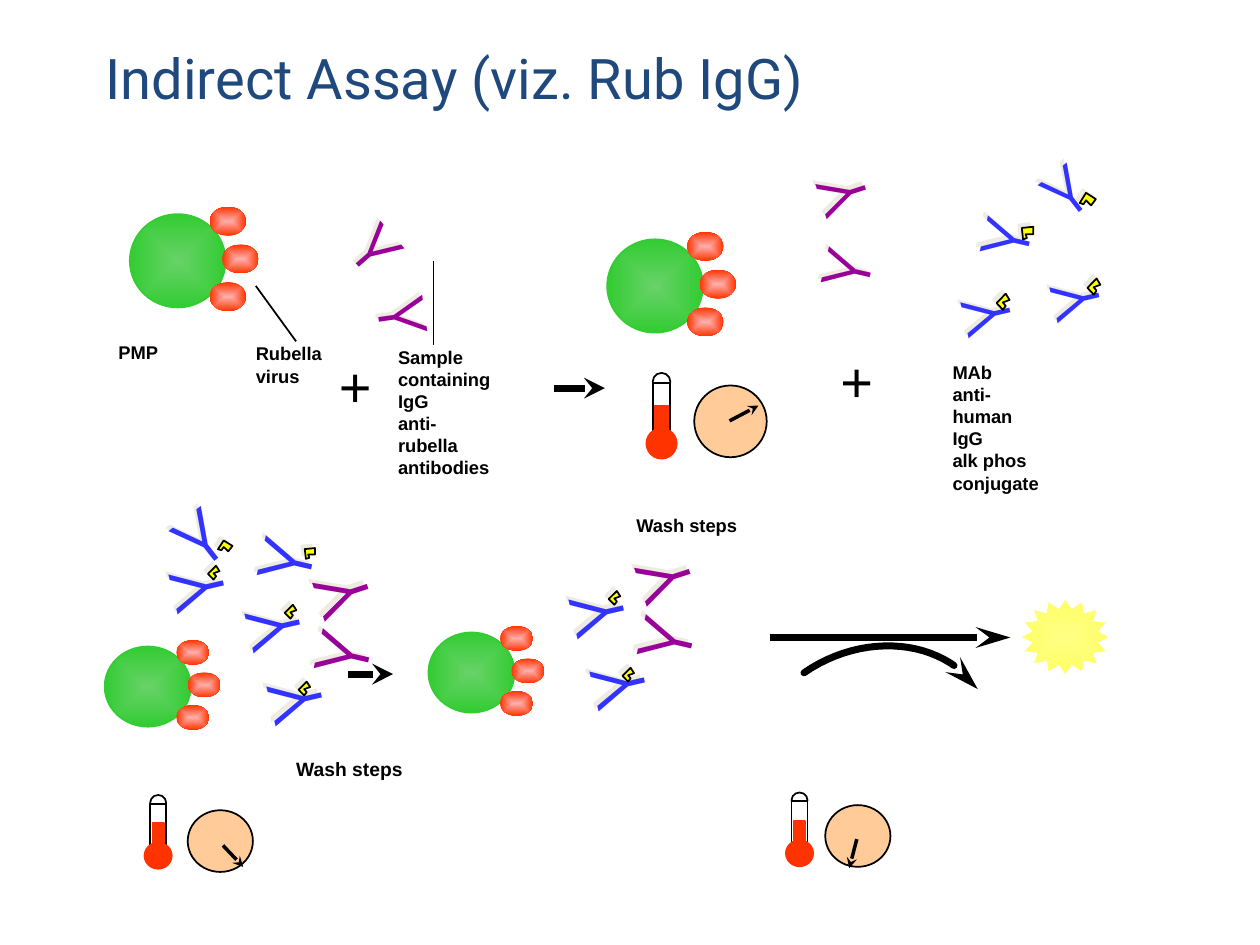
from dataclasses import dataclass

from lxml import etree
from pptx import Presentation
from pptx.dml.color import RGBColor
from pptx.enum.shapes import MSO_CONNECTOR, MSO_SHAPE
from pptx.enum.text import MSO_ANCHOR, PP_ALIGN
from pptx.oxml.ns import qn
from pptx.util import Pt

OVAL, RECT, STAR = MSO_SHAPE.OVAL, MSO_SHAPE.RECTANGLE, MSO_SHAPE.STAR_16_POINT
LINE = MSO_CONNECTOR.STRAIGHT
TOP, MID, LOW = MSO_ANCHOR.TOP, MSO_ANCHOR.MIDDLE, MSO_ANCHOR.BOTTOM
LEFT, MIDDLE = PP_ALIGN.LEFT, PP_ALIGN.CENTER


@dataclass(frozen=True)
class Theme:
    ink: str = "000000"
    paper: str = "FFFFFF"
    title: str = "1F497D"
    blue: str = "3333FF"
    purple: str = "990099"
    yellow: str = "FFFF00"
    red: str = "FF3300"
    green: str = "33CC33"
    dial: str = "FFCC99"
    shade: str = "EEECE1"
    core: tuple = ("67D267", "33CC33")
    spike: tuple = ("FFAEAB", "FF3300")
    glow: tuple = ("FFFF82", "FFFF66")
    body: str = "Arial"
    head: str = "Roboto"
    glyph: str = "TeX Gyre Adventor"
    big: float = 32
    small: float = 10.5
    note: float = 11


T = Theme()

# Horizontal scale, vertical scale and antibody type size of each row
UPPER = (1, 1, 36)
LOWER = (0.9, 0.86, 40)

# Outline of the enzyme tag for each turn of its antibody
TAGS = {
    257: [(3.6, 9.2), (0, 5.4), (5.2, 0), (7.4, 3.6), (3.6, 5), (5.2, 7)],
    283: [(0.7, 7.2), (0, 0.7), (6.5, 0), (6.5, 4.3), (2.2, 4.3), (2.9, 6.5)],
    322: [(0, 5.8), (3.6, 0), (9.2, 3.6), (6.5, 7.2), (3.6, 4.3), (2.2, 6.5)],
}


def rgb(code):
    return RGBColor.from_string(code)


def shade(shape):
    """Give a shape the hard pale shadow towards the upper left."""
    shape.shadow.inherit = False
    box = shape.element.spPr.find(qn("a:effectLst"))
    drop = etree.SubElement(box, qn("a:outerShdw"), dist=str(Pt(2.8)),
                            dir="13500000", algn="ctr", rotWithShape="0")
    etree.SubElement(drop, qn("a:srgbClr"), val=T.shade)


def paint(shape, fill=None, line=None, width=1):
    """A pair of colours as fill makes a gradient from the centre."""
    shape.shadow.inherit = False
    if isinstance(fill, tuple):
        shape.fill.gradient()
        for stop, code in zip(shape.fill.gradient_stops, fill):
            stop.color.rgb = rgb(code)
        grad = shape.element.spPr.find(qn("a:gradFill"))
        grad.remove(grad.find(qn("a:lin")))
        way = etree.SubElement(grad, qn("a:path"), path="shape")
        etree.SubElement(way, qn("a:fillToRect"),
                         l="50000", t="50000", r="50000", b="50000")
    elif fill:
        shape.fill.solid()
        shape.fill.fore_color.rgb = rgb(fill)
    else:
        shape.fill.background()
    if line:
        shape.line.color.rgb = rgb(line)
        shape.line.width = Pt(width)
    else:
        shape.line.fill.background()


def form(slide, kind, x, y, w, h, **style):
    shape = slide.shapes.add_shape(kind, Pt(x), Pt(y), Pt(w), Pt(h))
    paint(shape, **style)
    return shape


def text(slide, words, x, y, w, h, *, size=T.small, font=T.body, color=T.ink,
         bold=False, pad=(10.8, 5), anchor=TOP, align=LEFT, turn=0, wrap=True):
    box = slide.shapes.add_textbox(Pt(x), Pt(y), Pt(w), Pt(h))
    box.rotation = turn
    frame = box.text_frame
    frame.word_wrap = wrap
    frame.vertical_anchor = anchor
    frame.margin_left = frame.margin_right = Pt(pad[0])
    frame.margin_top = frame.margin_bottom = Pt(pad[1])
    frame.text = words
    for para in frame.paragraphs:
        para.alignment = align
        for run in para.runs:
            run.font.size, run.font.name = Pt(size), font
            run.font.bold = bold
            run.font.color.rgb = rgb(color)
    return box


def tip(shape, size="med"):
    ln = shape.line._get_or_add_ln()
    etree.SubElement(ln, qn("a:tailEnd"), type="stealth", w="med", len=size)


def rule(slide, x1, y1, x2, y2, width=1, head=None):
    line = slide.shapes.add_connector(LINE, Pt(x1), Pt(y1), Pt(x2), Pt(y2))
    line.line.color.rgb = rgb(T.ink)
    line.line.width = Pt(width)
    if head:
        tip(line, head)
    etree.SubElement(line.element.spPr, qn("a:effectLst"))


def trace(slide, dots, close):
    dots = [(Pt(x), Pt(y)) for x, y in dots]
    pen = slide.shapes.build_freeform(*dots[0])
    pen.add_line_segments(dots[1:], close=close)
    return pen.convert_to_shape()


def curve(slide, a, b, c, d, steps=24):
    """Draw a cubic curve with an arrowhead."""
    dots = []
    for i in range(steps + 1):
        t = i / steps
        u = 1 - t
        dots.append([u**3 * p + 3 * u * u * t * q + 3 * u * t * t * r + t**3 * s
                     for p, q, r, s in zip(a, b, c, d)])
    arc = trace(slide, dots, False)
    paint(arc, line=T.ink, width=4)
    arc.line._get_or_add_ln().set("cap", "rnd")
    tip(arc, "lg")


def body(slide, row, color, x, y, turn, tag=None):
    """Antibody centred on x, y, with an enzyme tag if a place is given."""
    kx, ky, size = row
    box = text(slide, "Y", x - 18, y - 24, 36, 48, size=size, font=T.glyph,
               color=color, pad=(0, 0), anchor=MID, align=MIDDLE,
               turn=turn, wrap=False)
    shade(box)
    if tag:
        dots = [(tag[0] + kx * px, tag[1] + ky * py) for px, py in TAGS[turn]]
        flag = trace(slide, dots, True)
        paint(flag, fill=T.yellow, line=T.ink)
        shade(flag)


def parts(slide, row, x, y, items):
    """Draw shapes at scaled offsets from x, y."""
    kx, ky, _ = row
    for kind, (dx, dy, w, h), fill, line in items:
        form(slide, kind, x + kx * dx, y + ky * dy, kx * w, ky * h,
             fill=fill, line=line)


def virus(slide, row, x, y):
    spikes = [(OVAL, (dx, dy, 20.9, 16.6), T.spike, None)
              for dx, dy in ((45.6, 38.9), (52.8, 17.3), (45.6, -4.3))]
    core = (OVAL, (0, 0, 54.7, 53.3), T.core, T.green)
    parts(slide, row, x, y, [core] + spikes)


def heat(slide, row, x, y):
    parts(slide, row, x, y, [
        (OVAL, (0, 30.2, 20.9, 20.2), T.paper, T.paper),
        (OVAL, (5.8, 0, 10.1, 10.1), T.paper, T.ink),
        (RECT, (5.8, 5.8, 10.1, 30.2), T.paper, T.ink),
        (OVAL, (2.2, 31.7, 17.3, 17.3), T.red, T.red),
        (RECT, (7.2, 18.7, 7.2, 18), T.red, T.red)])


def clock(slide, row, x, y, hand):
    parts(slide, row, x, y, [(OVAL, (0, 0, 41.4, 41), T.dial, T.ink)])
    rule(slide, *hand, width=2, head="med")


def main():
    deck = Presentation()
    deck.slide_width, deck.slide_height = Pt(720), Pt(540)
    slide = deck.slides.add_slide(deck.slide_layouts[6])

    # Title, labels and plus signs
    text(slide, "Indirect Assay (viz. Rub IgG)", 53.3, 23.8, 613.4, 43.2,
         size=T.big, font=T.head, color=T.title, pad=(7.2, 3.6), anchor=LOW)
    for words, x, y, w, h, size in (
            ("PMP", 56.9, 190, 46, 22, T.small),
            ("Rubella\nvirus", 135.4, 190.8, 62, 35, T.small),
            ("Sample\ncontaining\nIgG\nanti-rubella\nantibodies",
             216.7, 193, 76.3, 82, T.small),
            ("MAb\nanti-\nhuman IgG\nalk phos\nconjugate",
             533.5, 201.6, 73, 82, T.small),
            ("Wash steps", 352.8, 288.7, 82, 22, T.small),
            ("Wash steps", 158.4, 427.7, 90, 26, T.note)):
        text(slide, words, x, y, w, h, size=size, bold=True)
    for x, y in ((182.9, 195.8), (469.4, 193)):
        text(slide, "+", x, y, 42, 46.8, size=T.big)

    # Leader lines
    rule(slide, 247.7, 149, 247.7, 197.3)
    rule(slide, 146.2, 163.4, 169.2, 195.1)

    # Particles with rubella virus
    for row, x, y in ((UPPER, 74.2, 122.4), (UPPER, 347, 136.8),
                      (LOWER, 59.8, 369.4), (LOWER, 244.8, 361.4)):
        virus(slide, row, x, y)

    # Sample antibodies
    for row, x, y, turn in (
            (UPPER, 231, 181, 82), (UPPER, 215.5, 142.5, 49),
            (UPPER, 481, 111.5, 252), (UPPER, 483.5, 154.3, 283),
            (LOWER, 194.9, 340, 252), (LOWER, 195.1, 373.7, 283),
            (LOWER, 379.4, 331.4, 252), (LOWER, 379.7, 365.7, 283)):
        body(slide, row, T.purple, x, y, turn)

    # Conjugate antibodies with enzyme tags
    for row, x, y, turn, tag in (
            (UPPER, 614.2, 172.1, 257, (621.4, 159.1)),
            (UPPER, 609.1, 109.1, 322, (617, 110.2)),
            (UPPER, 574.2, 136.1, 283, (583.9, 129.6)),
            (UPPER, 563.4, 180.7, 257, (569.5, 167.8)),
            (LOWER, 114.3, 307.4, 322, (124.6, 308.9)),
            (LOWER, 163, 320.8, 283, (174.2, 313.2)),
            (LOWER, 112.6, 337, 257, (118.8, 323.3)),
            (LOWER, 168.3, 400.8, 257, (170.6, 389.5)),
            (LOWER, 156, 359.4, 257, (162.7, 345.6)),
            (LOWER, 352.9, 392.6, 257, (355.7, 381.6)),
            (LOWER, 341.1, 351.1, 257, (347.8, 337.7))):
        body(slide, row, T.blue, x, y, turn, tag)

    # Incubation: thermometers and clocks
    for row, x, y in ((UPPER, 367.2, 213.1), (LOWER, 80.6, 454.3),
                      (LOWER, 447.1, 452.9)):
        heat(slide, row, x, y)
    clock(slide, UPPER, 396.7, 220.3, (416.9, 240.5, 433.4, 231.8))
    clock(slide, LOWER, 107.3, 463, (127.4, 483.1, 139, 495.4))
    clock(slide, LOWER, 471.6, 460.1, (489.6, 479.5, 485.3, 496.1))

    # Step arrows, reaction and light signal
    rule(slide, 316.8, 221.8, 345.6, 221.8, width=4, head="med")
    rule(slide, 198.7, 385.2, 224.6, 385.2, width=4, head="med")
    rule(slide, 439.9, 364.3, 577.4, 364.3, width=4, head="lg")
    curve(slide, (459.4, 384.5), (493.9, 360.7), (538.6, 365), (558.7, 393.8))
    star = form(slide, STAR, 583.9, 342.7, 49.7, 42.5, fill=T.glow)
    star.adjustments[0] = 0.375

    deck.save("out.pptx")


if __name__ == "__main__":
    main()
